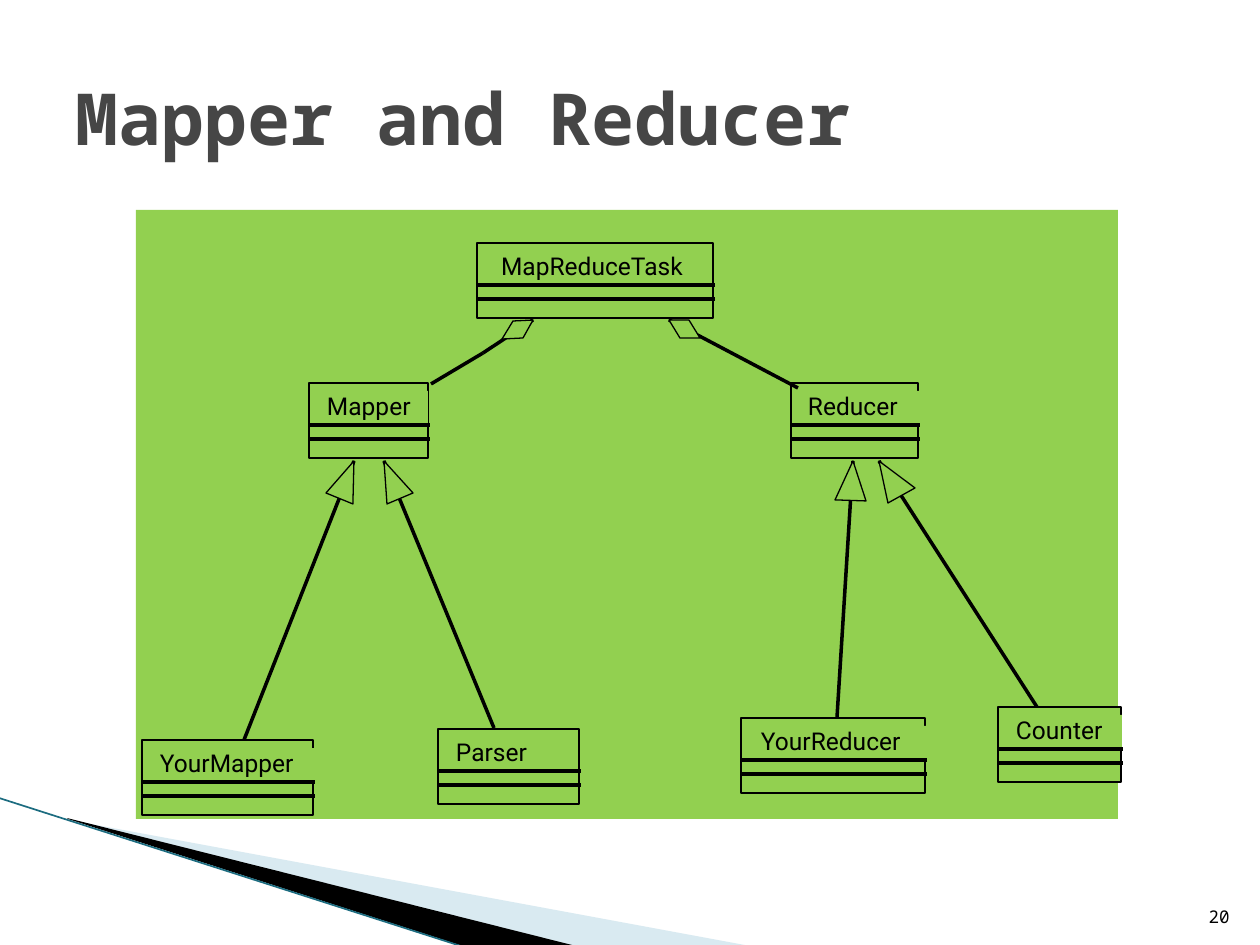
from dataclasses import dataclass
from itertools import pairwise

from lxml import etree
from pptx import Presentation
from pptx.dml.color import RGBColor
from pptx.enum.shapes import MSO_CONNECTOR, MSO_SHAPE
from pptx.enum.text import MSO_ANCHOR, PP_ALIGN
from pptx.oxml.ns import qn
from pptx.util import Pt

PX = 914400 / 126
RECT = MSO_SHAPE.RECTANGLE
STRAIGHT = MSO_CONNECTOR.STRAIGHT
MIDDLE, BOTTOM = MSO_ANCHOR.MIDDLE, MSO_ANCHOR.BOTTOM
LEFT, RIGHT = PP_ALIGN.LEFT, PP_ALIGN.RIGHT


@dataclass(frozen=True)
class Theme:
    ink: str = "000000"
    title: str = "464646"
    panel: str = "92D050"
    pale: str = "A0CBDC"
    edge: str = "1C6C80"
    mono: str = "Noto Sans Mono"
    sans: str = "Roboto"
    head: int = 41
    name: int = 14
    page: int = 10


THEME = Theme()


def emu(*sizes):
    return [round(size * PX) for size in sizes]


def paint(shape, fill, line=None):
    shape.shadow.inherit = False
    shape.fill.solid()
    shape.fill.fore_color.rgb = RGBColor.from_string(fill)
    if line:
        shape.line.color.rgb = RGBColor.from_string(line)
        shape.line.width = 0
    else:
        shape.line.fill.background()


def add_rect(slide, box, fill, line=None):
    paint(slide.shapes.add_shape(RECT, *emu(*box)), fill, line)


def add_line(slide, start, end, color=THEME.ink, width=0):
    line = slide.shapes.add_connector(STRAIGHT, *emu(*start, *end))
    line.line.color.rgb = RGBColor.from_string(color)
    line.line.width = Pt(width)
    etree.SubElement(line._element.spPr, qn("a:effectLst"))


def add_poly(slide, origin, points, fill, line=None):
    form = slide.shapes.build_freeform(*points[0], scale=PX)
    form.add_line_segments(points[1:], close=True)
    shape = form.convert_to_shape(*emu(*origin))
    paint(shape, fill, line)
    return shape


def add_text(slide, box, text, font, size, color, align=LEFT, anchor=None, bold=False):
    area = slide.shapes.add_textbox(*emu(*box))
    frame = area.text_frame
    frame.word_wrap = True
    if anchor is not None:
        frame.vertical_anchor = anchor
    line = frame.paragraphs[0]
    line.text = text
    line.alignment = align
    line.font.name = font
    line.font.size = Pt(size)
    line.font.bold = bold
    line.font.color.rgb = RGBColor.from_string(color)
    return area


def draw_swoosh(slide, box):
    x, y = box[:2]
    pale = add_poly(slide, (x, y), [(69, 22), (750, 148), (575, 148), (69, 21)], THEME.pale)
    color = pale.fill._xPr.find(qn("a:solidFill"))[0]
    etree.SubElement(color, qn("a:alpha"), val="40000")
    add_poly(slide, (x, y), [(67, 20), (576, 148), (469, 150), (68, 21)], THEME.ink)
    add_line(slide, (x - 1, y), (x + 467, y + 150), THEME.edge, 0.95)


def draw_class(slide, box, text, inset, label):
    x, y, w, h = box
    add_rect(slide, box, THEME.panel, THEME.ink)
    # The name plate may cover part of the right edge
    plate = add_text(slide, (x + inset, y + 8, *label), text,
                     THEME.sans, THEME.name, THEME.ink)
    plate.fill.solid()
    plate.fill.fore_color.rgb = RGBColor.from_string(THEME.panel)
    frame = plate.text_frame
    frame.margin_left = frame.margin_right = frame.margin_top = frame.margin_bottom = 0
    for drop in (42, 56):
        add_line(slide, (x, y + drop), (x + w + 2, y + drop))


def draw_link(slide, origin, route, head):
    x, y = origin
    for start, end in pairwise([(x + a, y + b) for a, b in route]):
        add_line(slide, start, end)
    add_poly(slide, origin, [route[-1], *head], THEME.panel, THEME.ink)


def draw_diagram(slide, box):
    x, y = box[:2]
    add_rect(slide, box, THEME.panel)

    # Classes: name, left, top, width, label inset, label size
    classes = [
        ("MapReduceTask", 341, 33, 236, 24, (184, 30)),
        ("YourMapper", 6, 530, 171, 18, (155, 34)),
        ("YourReducer", 605, 508, 184, 20, (166, 34)),
        ("Parser", 302, 519, 141, 18, (73, 30)),
        ("Counter", 862, 497, 123, 18, (106, 34)),
        ("Mapper", 173, 173, 119, 18, (101, 34)),
        ("Reducer", 655, 173, 127, 17, (111, 34)),
    ]
    for text, left, top, width, inset, label in classes:
        draw_class(slide, (x + left, y + top, width, 75), text, inset, label)

    # Links: route ending at the tip, then the other corners of the head
    links = [
        ([(108, 530), (218, 251)], [(217, 294), (190, 283)]),
        ([(358, 518), (248, 251)], [(277, 283), (251, 294)]),
        ([(701, 508), (717, 251)], [(730, 291), (699, 290)]),
        ([(901, 497), (743, 251)], [(779, 278), (752, 293)]),
        ([(295, 174), (347, 143), (397, 110)], [(387, 128), (366, 129), (377, 111)]),
        ([(662, 178), (533, 110)], [(553, 110), (564, 128), (544, 128)]),
    ]
    for route, head in links:
        draw_link(slide, (x, y), route, head)


def main():
    deck = Presentation()
    deck.slide_width, deck.slide_height = emu(1260, 945)
    slide = deck.slides.add_slide(deck.slide_layouts[6])
    draw_swoosh(slide, (0, 798, 750, 148))
    # Title
    add_text(slide, (63, 38, 1134, 157), "Mapper and Reducer",
             THEME.mono, THEME.head, THEME.title, anchor=MIDDLE, bold=True)
    draw_diagram(slide, (136, 210, 982, 609))
    # Page number
    add_text(slide, (1192, 883, 50, 50), "20",
             THEME.mono, THEME.page, THEME.ink, RIGHT, BOTTOM)
    deck.save("out.pptx")


if __name__ == "__main__":
    main()
